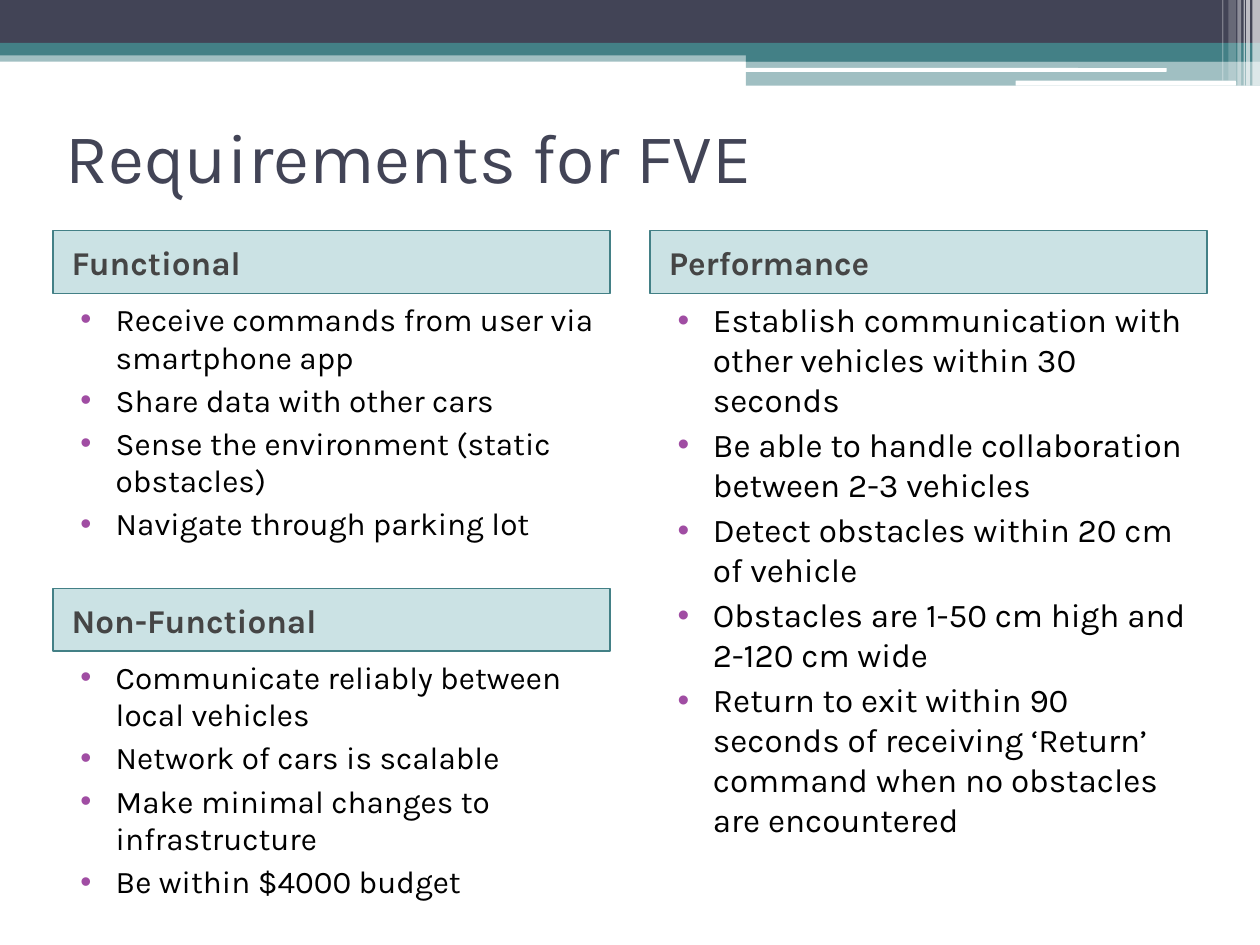
from typing import NamedTuple, Optional

from lxml import etree
from pptx import Presentation
from pptx import util as u
from pptx.dml.color import RGBColor
from pptx.enum import shapes, text
from pptx.oxml.ns import qn

COLORS = {
    "navy": "424456", "teal": "438086", "white": "FFFFFF", "panel": "328E97",
    "heading": "454545", "body": "000000", "bullet": "A04DA3",
}
FONT = "Karla"
COLUMN_WIDTH, HEADING_HEIGHT = 4.42, 0.5
LEFT, RIGHT = 0.42, 5.16


class Band(NamedTuple):
    left: float
    top: float
    width: float
    height: float
    color: str
    alpha: int = 100
    rounded: bool = False


class Section(NamedTuple):
    left: float
    top: float
    body_height: float
    body_size: int
    heading: str
    bullets: list[str]


# Header bars, then the thin white stripes at the right edge
BANDS = [
    Band(0, 0.4, 10, 0.09, "teal", 50),
    Band(0, 0, 10, 0.34, "navy"),
    Band(0, 0.34, 10, 0.1, "teal"),
    Band(5.92, 0.39, 4.08, 0.1, "teal"),
    Band(5.92, 0.48, 4.08, 0.2, "teal", 50),
    Band(5.91, 0.54, 3.35, 0.03, "white", rounded=True),
    Band(8.06, 0.64, 1.75, 0.04, "white", rounded=True),
] + [
    Band(left, 0, width, height, "white", alpha)
    for left, width, height, alpha in [
        (9.94, 0.06, 0.68, 65), (9.89, 0.03, 0.68, 65), (9.87, 0.01, 0.68, 60),
        (9.82, 0.03, 0.68, 40), (9.75, 0.06, 0.64, 20), (9.7, 0.01, 0.64, 30),
    ]
]

SECTIONS = [
    Section(LEFT, 1.83, 2.34, 18, "Functional", [
        "Receive commands from user via smartphone app",
        "Share data with other cars",
        "Sense the environment (static obstacles)",
        "Navigate through parking lot",
    ]),
    Section(LEFT, 4.67, 2.92, 18, "Non-Functional", [
        "Communicate reliably between local vehicles",
        "Network of cars is scalable",
        "Make minimal changes to infrastructure",
        "Be within $4000 budget",
    ]),
    Section(RIGHT, 1.83, 4.83, 19, "Performance", [
        "Establish communication with other vehicles within 30 seconds",
        "Be able to handle collaboration between 2-3 vehicles",
        "Detect obstacles within 20 cm of vehicle",
        "Obstacles are 1-50 cm high and 2-120 cm wide",
        "Return to exit within 90 seconds of receiving ‘Return’ command "
        "when no obstacles are encountered",
    ]),
]


def set_attributes(target, values: dict) -> None:
    for name, value in values.items():
        setattr(target, name, value)


def add_band(slide, band: Band):
    kind = shapes.MSO_SHAPE.ROUNDED_RECTANGLE if band.rounded else shapes.MSO_SHAPE.RECTANGLE
    shape = slide.shapes.add_shape(kind, *map(u.Inches, band[:4]))
    shape.shadow.inherit = False
    shape.fill.solid()
    shape.fill.fore_color.rgb = RGBColor.from_string(COLORS[band.color])
    shape.line.fill.background()
    if band.alpha < 100:
        color = shape.fill._xPr.find(qn("a:solidFill"))[0]
        etree.SubElement(color, qn("a:alpha"), val=str(band.alpha * 1000))
    return shape


def write_paragraph(paragraph, words: str, size: int, color: str, bold: bool = False,
                    space_before: int = 0, margin: float = 0, indent: float = 0,
                    bullet: Optional[str] = None) -> None:
    set_attributes(paragraph, {
        "alignment": text.PP_ALIGN.LEFT, "space_before": u.Pt(space_before),
    })
    run = paragraph.add_run()
    run.text = words
    set_attributes(run.font, {"name": FONT, "size": u.Pt(size), "bold": bold})
    run.font.color.rgb = RGBColor.from_string(COLORS[color])
    properties = paragraph._p.get_or_add_pPr()
    properties.set("marL", str(u.Inches(margin)))
    properties.set("indent", str(u.Inches(indent)))
    if bullet:
        bullet_color = etree.SubElement(properties, qn("a:buClr"))
        etree.SubElement(bullet_color, qn("a:srgbClr"), val=COLORS["bullet"])
        etree.SubElement(properties, qn("a:buFont"), typeface="Arial")
        etree.SubElement(properties, qn("a:buChar"), char=bullet)


def prepare_frame(shape, anchor):
    frame = shape.text_frame
    set_attributes(frame, {"word_wrap": True, "vertical_anchor": anchor})
    return frame


def add_title(slide, words: str) -> None:
    box = slide.shapes.add_textbox(*map(u.Inches, (LEFT, 0.65, 9.17, 1.17)))
    frame = prepare_frame(box, text.MSO_ANCHOR.MIDDLE)
    write_paragraph(frame.paragraphs[0], words, 40, "navy")


def add_section(slide, section: Section) -> None:
    # Heading panel
    panel = add_band(slide, Band(section.left, section.top, COLUMN_WIDTH,
                                 HEADING_HEIGHT, "panel", 25))
    panel.line.color.rgb = RGBColor.from_string(COLORS["teal"])
    panel.line.width = u.Pt(1)
    frame = prepare_frame(panel, text.MSO_ANCHOR.MIDDLE)
    write_paragraph(frame.paragraphs[0], section.heading, 19, "heading",
                    bold=True, space_before=3, margin=0.05)

    # Bulleted list directly below the panel
    box = slide.shapes.add_textbox(
        u.Inches(section.left), u.Inches(section.top + HEADING_HEIGHT),
        u.Inches(COLUMN_WIDTH), u.Inches(section.body_height))
    frame = prepare_frame(box, text.MSO_ANCHOR.TOP)
    for index, words in enumerate(section.bullets):
        paragraph = frame.add_paragraph() if index else frame.paragraphs[0]
        write_paragraph(paragraph, words, section.body_size, "body",
                        space_before=3, margin=0.4, indent=-0.28, bullet="•")


def main() -> None:
    presentation = Presentation()
    set_attributes(presentation, {"slide_width": u.Inches(10), "slide_height": u.Inches(7.5)})
    slide = presentation.slides.add_slide(presentation.slide_layouts[6])
    for band in BANDS:
        add_band(slide, band)
    add_title(slide, "Requirements for FVE")
    for section in SECTIONS:
        add_section(slide, section)
    presentation.save("out.pptx")


if __name__ == "__main__":
    main()
